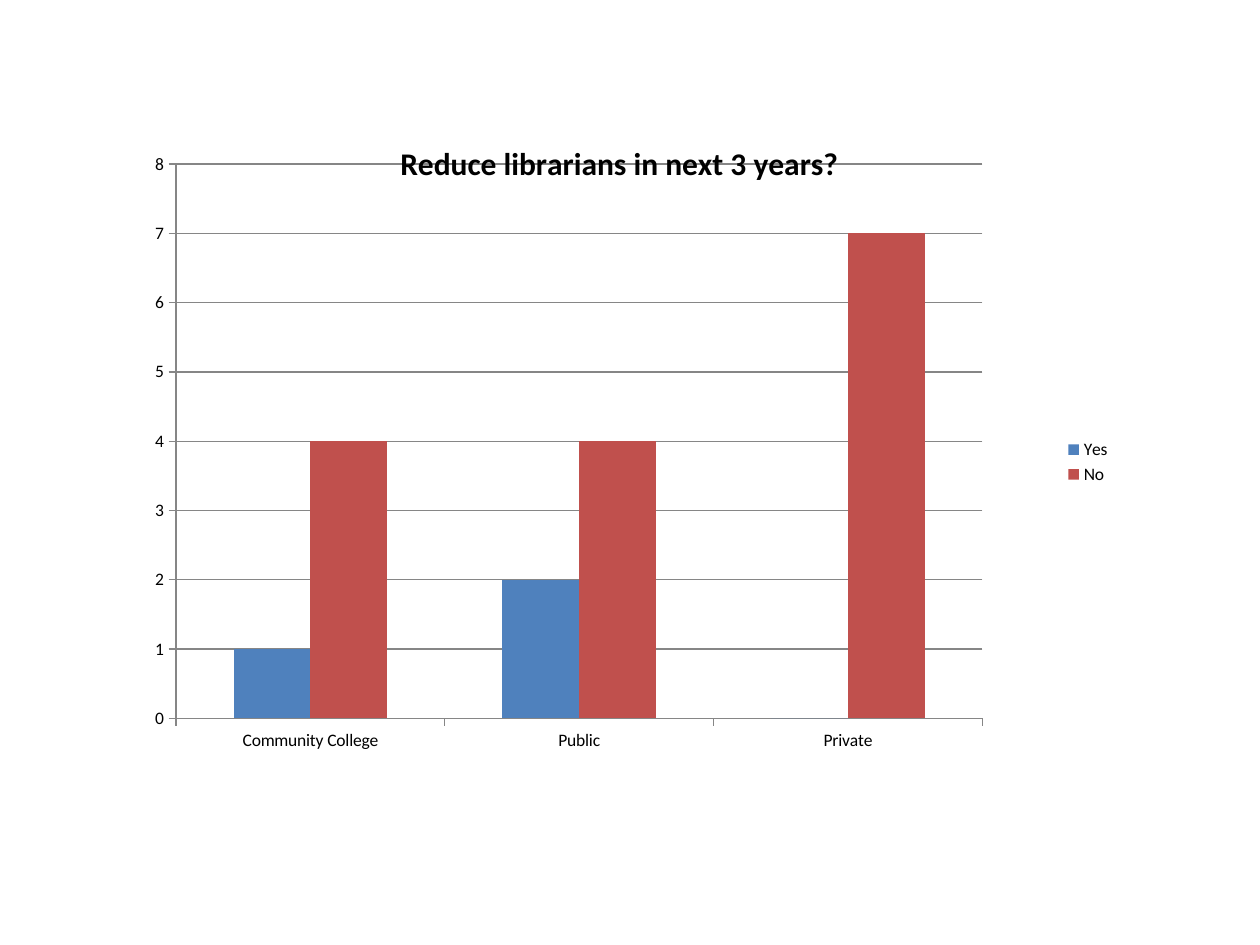
from lxml.etree import SubElement
from pptx import Presentation
from pptx.chart.data import CategoryChartData
from pptx.dml.color import RGBColor
from pptx.enum.chart import XL_CHART_TYPE as ChartType
from pptx.enum.chart import XL_LEGEND_POSITION as LegendPosition
from pptx.enum.chart import XL_TICK_MARK as TickMark
from pptx.oxml.ns import qn
from pptx.util import Cm, Pt

COLORS = {"text": "000000", "line": "868686", "Yes": "4F81BD", "No": "C0504D"}
CATEGORIES = ["Community College", "Public", "Private"]
ANSWERS = {"Yes": [1, 2, 0], "No": [4, 4, 7]}


class SlideBuilder:
    def __init__(self, slide, font="Calibri"):
        self.slide = slide
        self.font = font

    def style_text(self, font, size, bold=False):
        font.name = self.font
        font.size = Pt(size)
        font.bold = bold
        font.color.rgb = RGBColor.from_string(COLORS["text"])

    def style_line(self, line):
        line.width = Pt(0.75)
        line.color.rgb = RGBColor.from_string(COLORS["line"])

    def place_plot(self, chart, x, y, w, h):
        """Fix the inner plot area, in fractions of the chart's size."""
        plot_area = chart.plots[0]._element.getparent()
        layout = plot_area.find(qn("c:layout"))
        if layout is None:
            layout = SubElement(plot_area, qn("c:layout"))
            plot_area.insert(0, layout)
        manual = SubElement(layout, qn("c:manualLayout"))
        settings = {"layoutTarget": "inner", "xMode": "edge", "yMode": "edge",
                    "x": x, "y": y, "w": w, "h": h}
        for tag, value in settings.items():
            SubElement(manual, qn(f"c:{tag}")).set("val", str(value))

    def add_title(self, chart, wording):
        title = chart.chart_title
        run = title.text_frame.paragraphs[0].add_run()
        run.text = wording
        self.style_text(run.font, 18, bold=True)
        title._element.get_or_add_overlay().set("val", "1") if hasattr(
            title._element, "get_or_add_overlay") else self.overlay(title)

    def overlay(self, title):
        """Let the title lie over the plot area."""
        flag = title._element.find(qn("c:overlay"))
        if flag is None:
            flag = SubElement(title._element, qn("c:overlay"))
        flag.set("val", "1")

    def add_column_chart(self, title, categories, answers, left, top, width, height):
        data = CategoryChartData(number_format="General")
        data.categories = categories
        for name, counts in answers.items():
            data.add_series(name, counts)
        chart = self.slide.shapes.add_chart(
            ChartType.COLUMN_CLUSTERED, left, top, width, height, data).chart
        self.style_text(chart.font, 10)
        self.add_title(chart, title)

        columns = chart.plots[0]
        columns.gap_width = 150
        columns.overlap = 0
        columns.vary_by_categories = False
        for series in columns.series:
            series.format.fill.solid()
            series.format.fill.fore_color.rgb = RGBColor.from_string(COLORS[series.name])

        for axis in (chart.category_axis, chart.value_axis):
            axis.major_tick_mark = TickMark.OUTSIDE
            axis.minor_tick_mark = TickMark.NONE
            self.style_line(axis.format.line)
        counts_axis = chart.value_axis
        counts_axis.minimum_scale, counts_axis.maximum_scale = 0, 8
        counts_axis.major_unit = 1
        counts_axis.has_major_gridlines = True
        self.style_line(counts_axis.major_gridlines.format.line)

        chart.has_legend = True
        chart.legend.position = LegendPosition.RIGHT
        chart.legend.include_in_layout = False
        self.place_plot(chart, 0.06, 0.07, 0.8, 0.8)


def main():
    presentation = Presentation()
    presentation.slide_width, presentation.slide_height = Cm(25.4), Cm(19.05)
    builder = SlideBuilder(presentation.slides.add_slide(presentation.slide_layouts[6]))
    builder.add_column_chart("Reduce librarians in next 3 years?", CATEGORIES, ANSWERS,
                             Cm(2.33), Cm(2.33), Cm(20.32), Cm(13.97))
    presentation.save("out.pptx")


if __name__ == "__main__":
    main()
